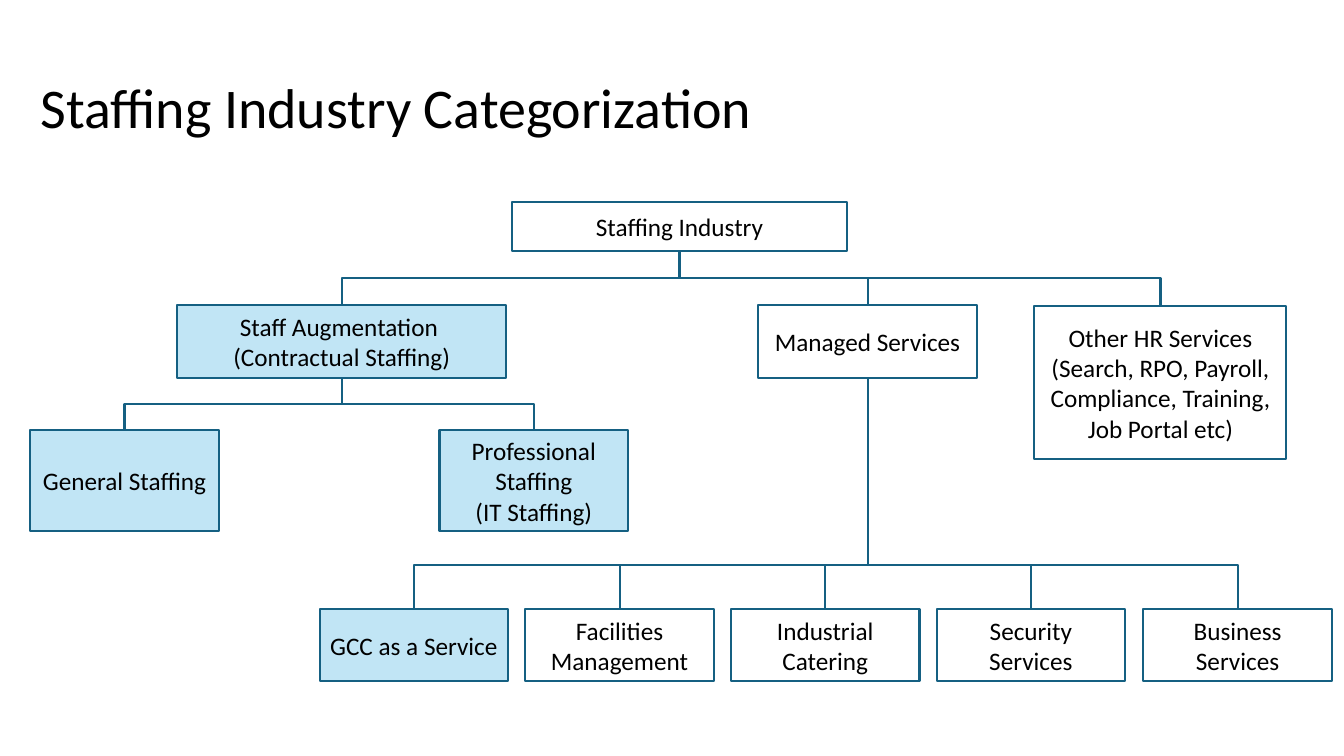
"""Build a one-slide tree of the staffing industry."""
from lxml import etree
from pptx import Presentation
from pptx.dml.color import RGBColor
from pptx.enum.shapes import MSO_CONNECTOR, MSO_SHAPE
from pptx.enum.text import MSO_ANCHOR, MSO_AUTO_SIZE, PP_ALIGN
from pptx.oxml.ns import qn
from pptx.util import Pt

PX = 9144
BLACK = RGBColor(0x00, 0x00, 0x00)
WHITE = RGBColor(0xFF, 0xFF, 0xFF)
BLUE = RGBColor(0xC1, 0xE5, 0xF5)
TEAL = RGBColor(0x15, 0x60, 0x82)
RECT = MSO_SHAPE.RECTANGLE
ELBOW = MSO_CONNECTOR.ELBOW
LEFT, CENTER = PP_ALIGN.LEFT, PP_ALIGN.CENTER
MIDDLE = MSO_ANCHOR.MIDDLE
NO_FIT = MSO_AUTO_SIZE.NONE
TOP, BOTTOM = 0, 2


def write(frame, text, size=18, align=CENTER, space=None):
    frame.text = text
    frame.word_wrap = True
    frame.auto_size = NO_FIT
    frame.vertical_anchor = MIDDLE
    for para in frame.paragraphs:
        para.alignment = align
        para.line_spacing = space
        font = para.runs[0].font
        font.name = "Calibri"
        font.size = Pt(size)
        font.color.rgb = BLACK


def place(shape, left, top, width, height):
    shape.left, shape.top = int(left * PX), int(top * PX)
    shape.width, shape.height = int(width * PX), int(height * PX)


def add_title(slide, text):
    title = slide.shapes.title
    place(title, 30, 53, 1072, 113)
    write(title.text_frame, text, size=40, align=LEFT, space=0.9)


def add_box(slide, text, left, top, width, height, fill=WHITE):
    box = slide.shapes.add_shape(RECT, *(n * PX for n in (left, top, width, height)))
    box.shadow.inherit = False
    box.fill.solid()
    box.fill.fore_color.rgb = fill
    box.line.color.rgb = TEAL
    box.line.width = Pt(1.5)
    write(box.text_frame, text)
    return box


def add_link(slide, upper, lower, bus):
    """Join two boxes by an upright elbow that turns at height bus."""
    link = slide.shapes.add_connector(ELBOW, 0, 0, 0, 0)
    link.begin_connect(upper, BOTTOM)
    link.end_connect(lower, TOP)
    x1, y1 = (upper.left + upper.width / 2) / PX, (upper.top + upper.height) / PX
    x2, y2 = (lower.left + lower.width / 2) / PX, lower.top / PX
    drop, span = y2 - y1, abs(x2 - x1)
    place(link, (x1 + x2 - drop) / 2, (y1 + y2 - span) / 2, drop, span)
    right = x2 > x1
    props = link.element.spPr
    frame = props.find(qn("a:xfrm"))
    frame.set("rot", "16200000" if right else "5400000")
    frame.set("flipH", "1" if right else "0")
    frame.set("flipV", "0")
    turn = round((bus - y1) / drop * 100000)
    guides = props.find(qn("a:prstGeom")).find(qn("a:avLst"))
    etree.SubElement(guides, qn("a:gd"), name="adj1", fmla=f"val {turn}")
    link.line.color.rgb = TEAL
    link.line.width = Pt(1.5)
    etree.SubElement(props, qn("a:effectLst"))


def main():
    deck = Presentation()
    deck.slide_width, deck.slide_height = 1333 * PX, 750 * PX
    slide = deck.slides.add_slide(deck.slide_layouts[5])
    add_title(slide, "Staffing Industry Categorization")

    root = add_box(slide, "Staffing Industry", 508, 200, 332, 49)
    staff = add_box(slide, "Staff Augmentation \n(Contractual Staffing)",
                    176, 303, 326, 72, BLUE)
    managed = add_box(slide, "Managed Services", 752, 303, 217, 72)
    other = add_box(slide, "Other HR Services (Search, RPO, Payroll, "
                    "Compliance, Training, Job Portal etc)", 1026, 304, 250, 151)
    for child in (staff, managed, other):
        add_link(slide, root, child, 276)

    kinds = (("General Staffing", 30), ("Professional Staffing\n(IT Staffing)", 436))
    for text, left in kinds:
        add_link(slide, staff, add_box(slide, text, left, 427, 187, 100, BLUE), 401)

    names = ("GCC as a Service", "Facilities Management", "Industrial Catering",
             "Security Services", "Business Services")
    for i, text in enumerate(names):
        fill = WHITE if i else BLUE
        box = add_box(slide, text, 317 + 817 * i // 4, 604, 187, 72, fill)
        add_link(slide, managed, box, 561)
    deck.save("out.pptx")


if __name__ == "__main__":
    main()
